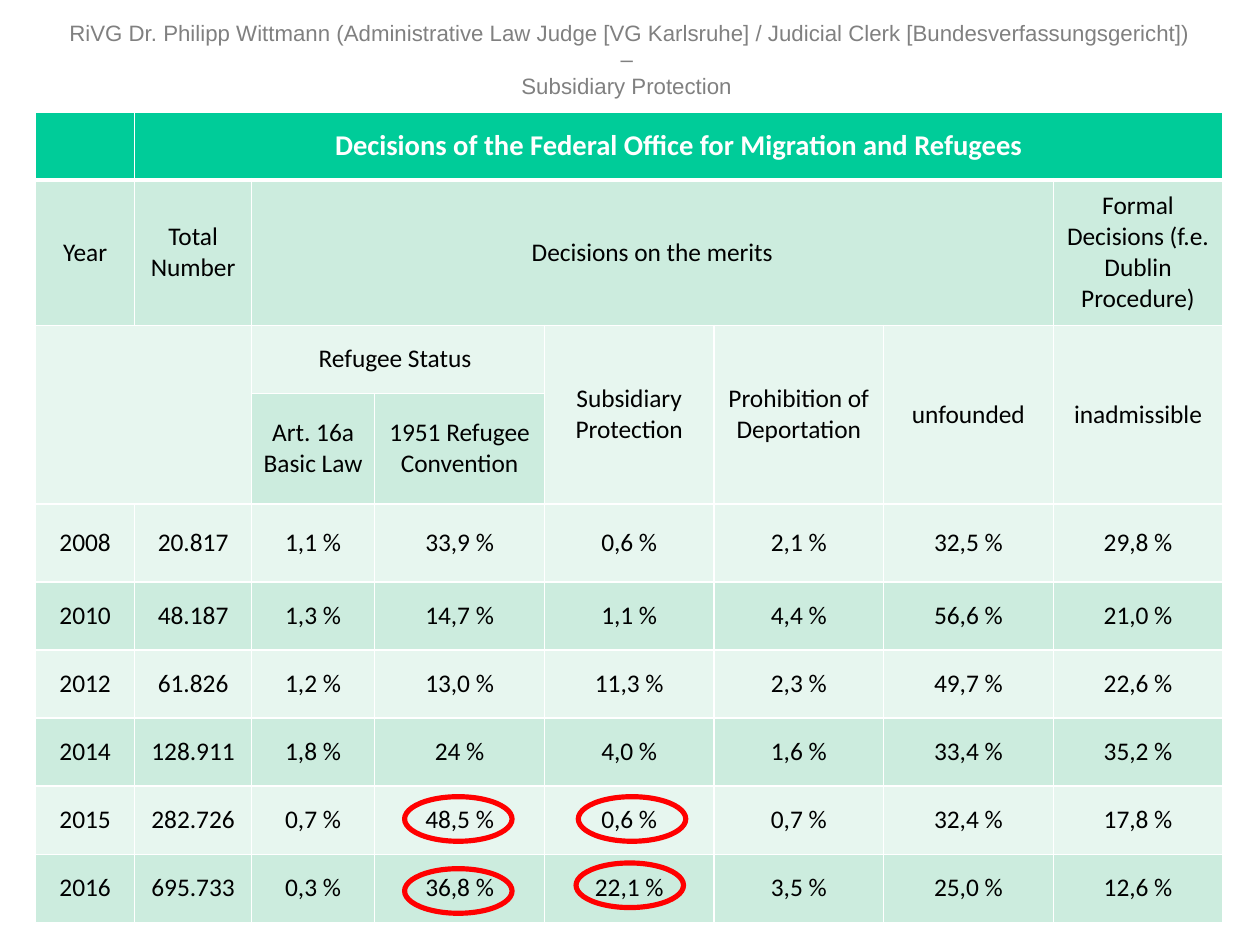
from lxml import etree
from pptx import Presentation
from pptx.dml.color import RGBColor
from pptx.enum import shapes, text
from pptx.oxml import ns
from pptx.util import Inches, Pt

WHITE, BLACK, GREY, RED = "FFFFFF", "000000", "808080", "FF0000"
HEADER_GREEN, DARK_BAND, LIGHT_BAND = "00CC99", "CCECDE", "E7F6EF"

CM_PER_INCH = 2.54
TABLE_WIDTH, TABLE_HEIGHT = 10.39, 7.09
NARROW_COLUMNS = [0.87, 1.02, 1.08]
COLUMN_WIDTHS = NARROW_COLUMNS + [(TABLE_WIDTH - sum(NARROW_COLUMNS)) / 5] * 5
TALL_ROWS = {1: 1.27, 3: 0.97, 4: 0.68}
PLAIN_HEIGHT = (TABLE_HEIGHT - sum(TALL_ROWS.values())) / 7

ROWS = [
    ["", "Decisions of the Federal Office for Migration and Refugees", "", "", "", "", "", ""],
    ["Year", "Total Number", "Decisions on the merits", "", "", "", "",
     "Formal Decisions (f.e. Dublin Procedure)"],
    ["", "", "Refugee Status ", "", "Subsidiary Protection", "Prohibition of Deportation",
     "unfounded", "inadmissible"],
    ["", "", "Art. 16a Basic Law", "1951 Refugee Convention", "", "", "", ""],
    ["2008", "20.817", "1,1 %", "33,9 %", "0,6 %", "2,1 %", "32,5 %", "29,8 %"],
    ["2010", "48.187", "1,3 %", "14,7 %", "1,1 %", "4,4 %", "56,6 %", "21,0 %"],
    ["2012", "61.826", "1,2 %", "13,0 %", "11,3 %", "2,3 %", "49,7 %", "22,6 %"],
    ["2014", "128.911", "1,8 %", "24 %", "4,0 %", "1,6 %", "33,4 %", "35,2 %"],
    ["2015", "282.726", "0,7 %", "48,5 %", "0,6 %", "0,7 %", "32,4 %", "17,8 %"],
    ["2016", "695.733", "0,3 %", "36,8 %", "22,1 %", "3,5 %", "25,0 %", "12,6 %"],
]

# First and last cell of each merged area, as (row, column)
MERGES = [((0, 1), (0, 7)), ((1, 2), (1, 6)), ((2, 0), (3, 1)), ((2, 2), (2, 3))]
MERGES += [((2, column), (3, column)) for column in range(4, 8)]

HIGHLIGHTS = [(3.54, 6.97), (3.54, 7.6), (5.06, 6.97), (5.04, 7.55)]


def color(hex_string):
    return RGBColor.from_string(hex_string)


def add_centred_run(paragraph, content, font_name, size, hex_color, bold=False):
    paragraph.alignment = text.PP_ALIGN.CENTER
    run = paragraph.add_run()
    run.text = content
    run.font.name = font_name
    run.font.size = Pt(size)
    run.font.bold = bold
    run.font.color.rgb = color(hex_color)


def add_heading(slide, lines):
    box = slide.shapes.add_textbox(Inches(0.55), Inches(0.33), Inches(9.92), Inches(0.6))
    frame = box.text_frame
    frame.word_wrap = True
    frame.vertical_anchor = text.MSO_ANCHOR.MIDDLE
    frame.margin_left = frame.margin_right = frame.margin_top = 0
    frame.margin_bottom = Inches(0.23)
    for index, line in enumerate(lines):
        paragraph = frame.add_paragraph() if index else frame.paragraphs[0]
        add_centred_run(paragraph, line, "Arial", 14, GREY)


def set_borders(cell, hex_color, widths):
    """Draw the cell's borders; widths maps a side (L, R, T, B) to points."""
    properties = cell._tc.get_or_add_tcPr()
    for side, width in widths.items():
        line = etree.SubElement(properties, ns.qn(f"a:ln{side}"), w=str(Pt(width)))
        fill = etree.SubElement(line, ns.qn("a:solidFill"))
        etree.SubElement(fill, ns.qn("a:srgbClr"), val=hex_color)


def style_cell(cell, row, content):
    is_header = row == 0
    set_borders(cell, WHITE, {"L": 1, "R": 1, "T": 1, "B": 3 if is_header else 1})
    band = DARK_BAND if row % 2 else LIGHT_BAND
    cell.fill.solid()
    cell.fill.fore_color.rgb = color(HEADER_GREEN if is_header else band)
    cell.vertical_anchor = text.MSO_ANCHOR.MIDDLE
    if content:
        add_centred_run(cell.text_frame.paragraphs[0], content, "Calibri",
                        18 if is_header else 16, WHITE if is_header else BLACK, is_header)


def add_decisions_table(slide):
    table = slide.shapes.add_table(
        len(ROWS), len(COLUMN_WIDTHS), Inches(0.31), Inches(0.98),
        Inches(TABLE_WIDTH), Inches(TABLE_HEIGHT)).table
    table.horz_banding = False
    for column, width in zip(table.columns, COLUMN_WIDTHS):
        column.width = Inches(width)
    for index, row in enumerate(table.rows):
        row.height = Inches(TALL_ROWS.get(index, PLAIN_HEIGHT))
    for first, last in MERGES:
        table.cell(*first).merge(table.cell(*last))
    for row, contents in enumerate(ROWS):
        for column, content in enumerate(contents):
            style_cell(table.cell(row, column), row, content)


def add_highlight(slide, left, top):
    ellipse = slide.shapes.add_shape(
        shapes.MSO_SHAPE.OVAL, Inches(left), Inches(top), Inches(0.94), Inches(0.39))
    ellipse.shadow.inherit = False
    ellipse.fill.background()
    ellipse.line.color.rgb = color(RED)
    ellipse.line.width = Pt(3.25)


def main():
    presentation = Presentation()
    presentation.slide_width = Inches(28 / CM_PER_INCH)
    presentation.slide_height = Inches(21 / CM_PER_INCH)
    slide = presentation.slides.add_slide(presentation.slide_layouts[6])
    add_heading(slide, [
        "RiVG Dr. Philipp Wittmann (Administrative Law Judge [VG Karlsruhe] / "
        "Judicial Clerk [Bundesverfassungsgericht]) – ",
        "Subsidiary Protection ",
    ])
    add_decisions_table(slide)
    for left, top in HIGHLIGHTS:
        add_highlight(slide, left, top)
    presentation.save("out.pptx")


if __name__ == "__main__":
    main()
